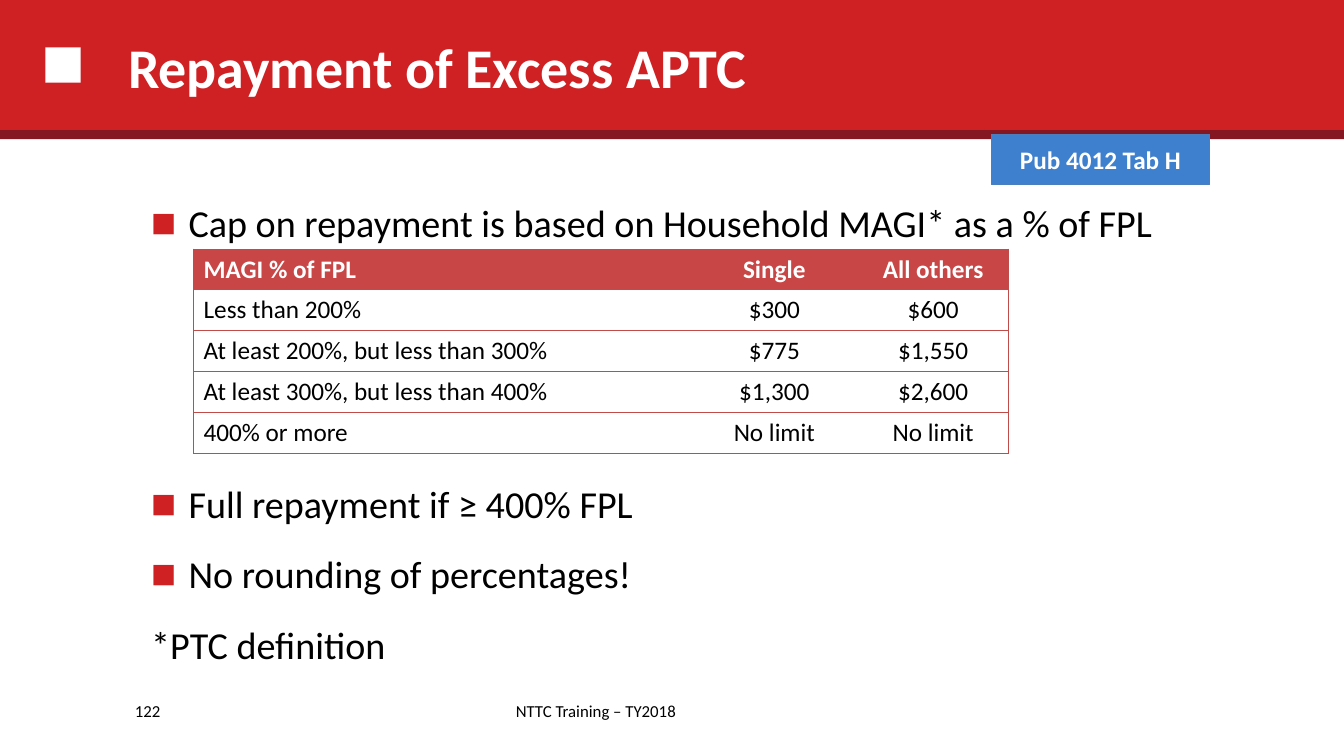
from lxml import etree
from pptx import Presentation
from pptx import util as u
from pptx.dml.color import RGBColor
from pptx.enum import shapes, text
from pptx.oxml.ns import qn

COLORS = {
    "banner": "CF2124", "stripe": "841721", "white": "FFFFFF", "black": "000000",
    "tag": "3F80CE", "tag_line": "4B7EBC", "header": "C84646", "grid": "BF4C48",
}
LEFT, CENTER, RIGHT = text.PP_ALIGN.LEFT, text.PP_ALIGN.CENTER, text.PP_ALIGN.RIGHT
BULLETS = [
    ("Cap on repayment is based on Household MAGI* as a % of FPL", True, 0),
    ("Full repayment if ≥ 400% FPL", True, 168),
    ("No rounding of percentages!", True, 17.5),
    ("*PTC definition", False, 17.5),
]
CAPS = [
    ("MAGI % of FPL", "Single", "All others"),
    ("Less than 200%", "$300", "$600"),
    ("At least 200%, but less than 300%", "$775", "$1,550"),
    ("At least 300%, but less than 400%", "$1,300", "$2,600"),
    ("400% or more", "No limit", "No limit"),
]


class SlideBuilder:
    """Holds the style and the current slide, and adds each kind of element."""

    def __init__(self, deck, font="Calibri"):
        self.font = font
        self.page = deck.slides.add_slide(deck.slide_layouts[1])

    def color(self, name):
        return RGBColor.from_string(COLORS[name])

    def add_span(self, para, words, size, color="black", bold=False, align=LEFT):
        para.alignment = align
        span = para.add_run()
        span.text = words
        span.font.name = self.font
        span.font.size = u.Pt(size)
        span.font.bold = bold
        span.font.color.rgb = self.color(color)

    def place(self, box, left, top, width, height):
        box.left, box.top = u.Inches(left), u.Inches(top)
        box.width, box.height = u.Inches(width), u.Inches(height)
        box.text_frame.word_wrap = True
        box.text_frame.auto_size = text.MSO_AUTO_SIZE.NONE

    def rectangle(self, left, top, width, height, fill, line=None):
        box = self.page.shapes.add_shape(
            shapes.MSO_SHAPE.RECTANGLE,
            u.Inches(left), u.Inches(top), u.Inches(width), u.Inches(height))
        box.shadow.inherit = False
        box.fill.solid()
        box.fill.fore_color.rgb = self.color(fill)
        if line:
            box.line.color.rgb = self.color(line)
            box.line.width = u.Pt(0.75)
        else:
            box.line.fill.background()
        return box

    def label(self, words, left, width, align):
        top, height = u.Inches(6.85), u.Inches(0.4)
        box = self.page.shapes.add_textbox(u.Inches(left), top, u.Inches(width), height)
        box.text_frame.word_wrap = True
        box.text_frame.vertical_anchor = text.MSO_ANCHOR.MIDDLE
        self.add_span(box.text_frame.paragraphs[0], words, 12, align=align)

    def title(self, words):
        box = self.page.shapes.title
        self.place(box, 1.17, 0.03, 10.66, 1.25)
        box.text_frame.vertical_anchor = text.MSO_ANCHOR.MIDDLE
        self.add_span(box.text_frame.paragraphs[0], words, 40, "white", True)
        self.bring_to_front(box)

    def bring_to_front(self, box):
        self.page.shapes._spTree.append(box._element)

    def bullet(self, para, marked):
        props = para._p.get_or_add_pPr()
        indent = u.Inches(0.37) if marked else 0
        props.set("marL", str(indent))
        props.set("indent", str(-indent))
        if not marked:
            etree.SubElement(props, qn("a:buNone"))
            return
        tint = etree.SubElement(props, qn("a:buClr"))
        etree.SubElement(tint, qn("a:srgbClr"), val=COLORS["banner"])
        etree.SubElement(props, qn("a:buSzPct"), val="70000")
        etree.SubElement(props, qn("a:buFont"), typeface=self.font)
        etree.SubElement(props, qn("a:buChar"), char="■")

    def body(self, items):
        box = self.page.placeholders[1]
        self.place(box, 1.4, 1.93, 10.67, 4.66)
        frame = box.text_frame
        frame.vertical_anchor = text.MSO_ANCHOR.TOP
        for index, (words, marked, gap) in enumerate(items):
            para = frame.add_paragraph() if index else frame.paragraphs[0]
            self.bullet(para, marked)
            para.space_before = u.Pt(gap)
            self.add_span(para, words, 27.2)
        self.bring_to_front(box)

    def tag(self, words):
        box = self.rectangle(9.83, 1.33, 2.17, 0.5, "tag", "tag_line")
        box.text_frame.vertical_anchor = text.MSO_ANCHOR.MIDDLE
        self.add_span(box.text_frame.paragraphs[0], words, 18, "white", True, CENTER)

    def borders(self, cell, sides):
        props = cell._tc.get_or_add_tcPr()
        for side in "LRTB":
            edge = etree.SubElement(props, qn(f"a:ln{side}"), w=str(u.Pt(0.75)))
            if side in sides:
                paint = etree.SubElement(edge, qn("a:solidFill"))
                etree.SubElement(paint, qn("a:srgbClr"), val=COLORS["grid"])
            else:
                etree.SubElement(edge, qn("a:noFill"))

    def table(self, rows, widths):
        grid = self.page.shapes.add_table(
            len(rows), len(widths),
            u.Inches(1.92), u.Inches(2.47), u.Inches(sum(widths)), u.Inches(2.03)).table
        grid.horz_banding = False
        for column, width in zip(grid.columns, widths):
            column.width = u.Inches(width)
        for r, row in enumerate(rows):
            for c, words in enumerate(row):
                cell = grid.cell(r, c)
                outer = {0: "L", len(widths) - 1: "R"}.get(c, "")
                self.borders(cell, "TB" + outer)
                if r == 0:
                    cell.fill.solid()
                    cell.fill.fore_color.rgb = self.color("header")
                else:
                    cell.fill.background()
                self.add_span(cell.text_frame.paragraphs[0], words, 18,
                              "black" if r else "white", r == 0, CENTER if c else LEFT)


def main():
    deck = Presentation()
    deck.slide_width, deck.slide_height = u.Inches(13.33), u.Inches(7.5)
    slide = SlideBuilder(deck)
    slide.rectangle(0, -0.01, 13.33, 1.33, "banner")
    slide.rectangle(0.45, 0.47, 0.35, 0.35, "white")
    slide.rectangle(0, 1.29, 13.33, 0.09, "stripe")
    slide.label("NTTC Training – TY2018", 3.8, 4.22, CENTER)
    slide.label("122", 0.67, 1.02, RIGHT)
    slide.body(BULLETS)
    slide.title("Repayment of Excess APTC")
    slide.tag("Pub 4012 Tab H")
    slide.table(CAPS, [4.93, 1.66, 1.49])
    deck.save("out.pptx")


if __name__ == "__main__":
    main()
